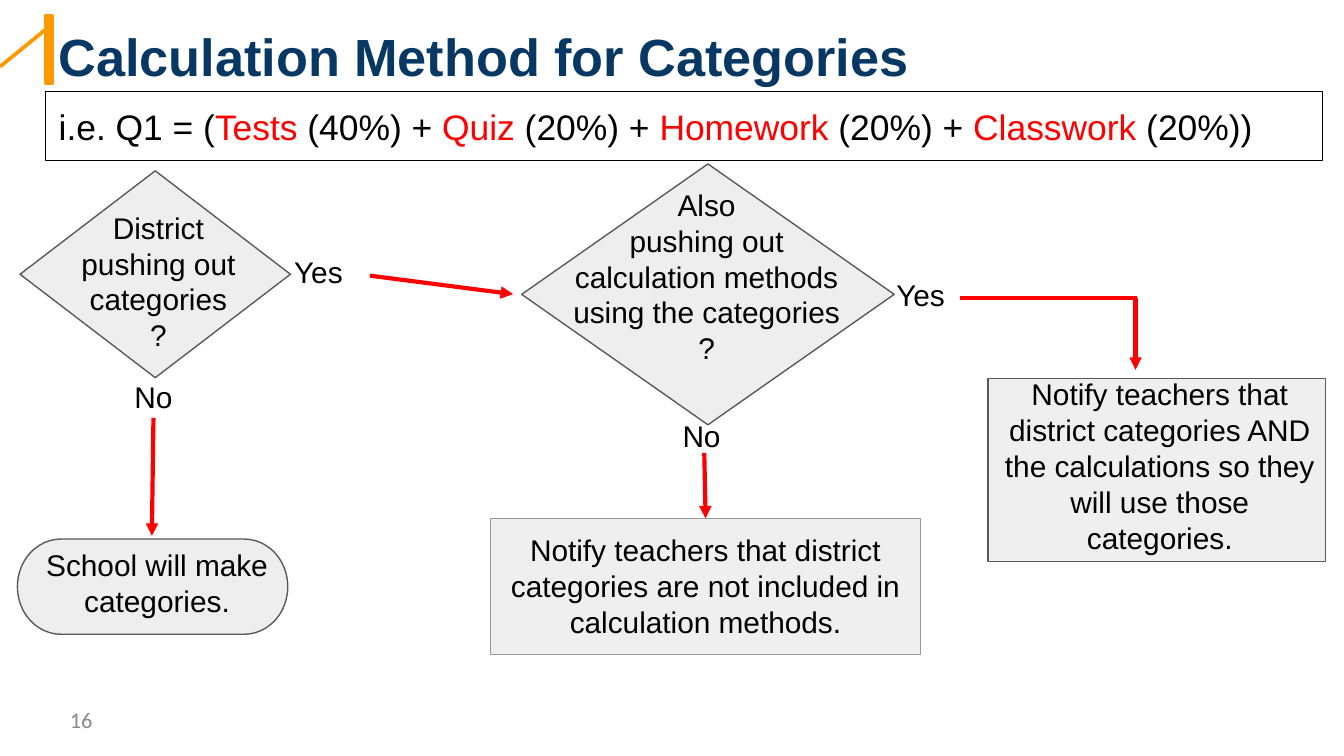
from lxml import etree
from pptx import Presentation
from pptx.dml.color import RGBColor
from pptx.enum.shapes import MSO_CONNECTOR, MSO_SHAPE
from pptx.enum.text import MSO_ANCHOR, PP_ALIGN
from pptx.oxml.ns import qn
from pptx.util import Cm, Pt

STRAIGHT = MSO_CONNECTOR.STRAIGHT
DECISION = MSO_SHAPE.FLOWCHART_DECISION
PROCESS = MSO_SHAPE.FLOWCHART_PROCESS
TERMINATOR = MSO_SHAPE.FLOWCHART_TERMINATOR
RECTANGLE = MSO_SHAPE.RECTANGLE
TOP, MIDDLE = MSO_ANCHOR.TOP, MSO_ANCHOR.MIDDLE
LEFT, CENTER = PP_ALIGN.LEFT, PP_ALIGN.CENTER

COLORS = {
    "accent": "FF9900",
    "title": "073763",
    "text": "000000",
    "red": "FF0000",
    "decision": "EEEEEE",
    "notice": "EFEFEF",
    "outline": "595959",
    "light_outline": "999999",
    "number": "888888",
}
TOP_SIDE = 0


def color(name):
    return RGBColor.from_string(COLORS[name])


def lengths(*values):
    return [Cm(value) for value in values]


def write(shape, paragraphs, size=16, align=LEFT, anchor=TOP, font="Arial", bold=False, inset=0.25):
    frame = shape.text_frame
    frame_format = {
        "word_wrap": True,
        "vertical_anchor": anchor,
        "margin_left": Cm(0.25),
        "margin_right": Cm(0.25),
        "margin_top": Cm(inset),
        "margin_bottom": Cm(inset),
    }
    for name, value in frame_format.items():
        setattr(frame, name, value)
    font_format = {"size": Pt(size), "name": font, "bold": bold}
    for index, runs in enumerate(paragraphs):
        paragraph = frame.add_paragraph() if index else frame.paragraphs[0]
        paragraph.alignment = align
        for text, color_name in runs:
            if text == "\n":
                paragraph.add_line_break()
                continue
            run = paragraph.add_run()
            run.text = text
            for name, value in font_format.items():
                setattr(run.font, name, value)
            run.font.color.rgb = color(color_name)


def add_text(slide, box, paragraphs, **text_format):
    shape = slide.shapes.add_textbox(*lengths(*box))
    write(shape, paragraphs, **text_format)


def add_block(slide, kind, box, fill, line, width=0.75):
    shape = slide.shapes.add_shape(kind, *lengths(*box))
    shape.shadow.inherit = False
    if fill:
        shape.fill.solid()
        shape.fill.fore_color.rgb = color(fill)
    else:
        shape.fill.background()
    shape.line.color.rgb = color(line)
    shape.line.width = Pt(width)
    return shape


def add_line(slide, start, end, line="red", width=2.25, arrow=True):
    connector = slide.shapes.add_connector(STRAIGHT, *lengths(*start, *end))
    connector.line.color.rgb = color(line)
    connector.line.width = Pt(width)
    properties = connector._element.spPr
    if arrow:
        etree.SubElement(properties.find(qn("a:ln")), qn("a:tailEnd"), type="triangle")
    etree.SubElement(properties, qn("a:effectLst"))
    return connector


def add_header(slide, box):
    left, top, width, height = box
    add_block(slide, RECTANGLE, (left, top + 0.1, 0.13, 1.28), "accent", "accent", 2)
    add_line(slide, (left, top + 0.36), (0, top + 1.06), "accent", 2, arrow=False)
    add_text(slide, box, [[("Calculation Method for Categories", "title")]], size=28, bold=True)


def add_formula(slide, box):
    shape = add_block(slide, RECTANGLE, box, None, "text")
    runs = [("i.e. Q1 = (", "text")]
    terms = [("Tests", " (40%) + "), ("Quiz", " (20%) + "), ("Homework", " (20%) + "), ("Classwork", " (20%))")]
    for category, weight in terms:
        runs += [(category, "red"), (weight, "text")]
    write(shape, [runs], size=19)


def add_category_branch(slide, box):
    left, top, width, height = box
    add_block(slide, DECISION, (left + 0.05, top, width, 3.91), "decision", "outline")
    question = [[("District pushing out categories", "text")], [("?", "text")]]
    add_text(slide, (left + 0.66, top + 0.48, 4.01, 3.45), question, align=CENTER)
    add_text(slide, (left + 1.96, top + 3.68, 1.42, 1.09), [[("No", "text")]])
    add_text(slide, (left + 4.98, top + 1.32, 1.68, 1.3), [[("Yes", "text")]])
    add_line(slide, (left + 2.57, top + 4.67), (left + 2.54, top + 6.9))
    add_line(slide, (left + 6.66, top + 1.98), (left + 9.37, top + 2.33))
    add_block(slide, TERMINATOR, (left, top + 6.96, width, 1.8), "decision", "outline")
    answer = [[("School will make categories.", "text")]]
    add_text(slide, (left + 0.15, top + 6.85, 4.98, 1.91), answer, align=CENTER)


def add_calculation_branch(slide, box):
    left, top, width, height = box
    add_block(slide, DECISION, (left + 0.59, top, 7.04, 4.93), "decision", "outline")
    question = [
        [("Also", "text"), ("\n", "text"), ("pushing out calculation methods using the categories", "text")],
        [("?", "text")],
    ]
    add_text(slide, (left + 1.19, top + 0.18, 5.79, 3.73), question, align=CENTER)
    add_text(slide, (left + 3.38, top + 4.55, 1.42, 1.3), [[("No", "text")]])
    add_text(slide, (left + 7.42, top + 1.88, 1.68, 1.3), [[("Yes", "text")]])
    notice = add_block(slide, RECTANGLE, (left, top + 6.7, width, 2.57), "notice", "light_outline")
    text = "Notify teachers that district categories are not included in calculation methods."
    write(notice, [[(text, "text")]], align=CENTER)
    arrow = add_line(slide, (left + 4.04, top + 5.46), (left + 4.04, top + 6.7))
    arrow.end_connect(notice, TOP_SIDE)


def add_notification_branch(slide, box):
    left, top, width, height = box
    add_line(slide, (left - 0.53, top), (left + 2.82, top), arrow=False)
    add_line(slide, (left + 2.79, top), (left + 2.79, top + 1.35))
    add_block(slide, PROCESS, (left, top + 1.52, width, 3.45), "notice", "outline")
    text = "Notify teachers that district categories AND the calculations so they will use those categories."
    add_text(slide, (left, top + 1.22, 6.5, 4.04), [[(text, "text")]], align=CENTER)


def add_page_number(slide, box):
    add_text(slide, box, [[("16", "number")]], size=12, font="Calibri", anchor=MIDDLE, inset=0.13)


def main():
    presentation = Presentation()
    presentation.slide_width, presentation.slide_height = lengths(25.4, 14.29)
    slide = presentation.slides.add_slide(presentation.slide_layouts[6])
    add_header(slide, (0.86, 0.2, 23.67, 1.6))
    add_formula(slide, (0.86, 1.73, 24.13, 1.3))
    add_category_branch(slide, (0.33, 3.23, 5.11, 8.76))
    add_calculation_branch(slide, (9.27, 3.1, 8.13, 9.27))
    add_notification_branch(slide, (18.67, 5.64, 6.38, 4.97))
    add_page_number(slide, (1.07, 13.23, 2.11, 0.76))
    presentation.save("out.pptx")


if __name__ == "__main__":
    main()
